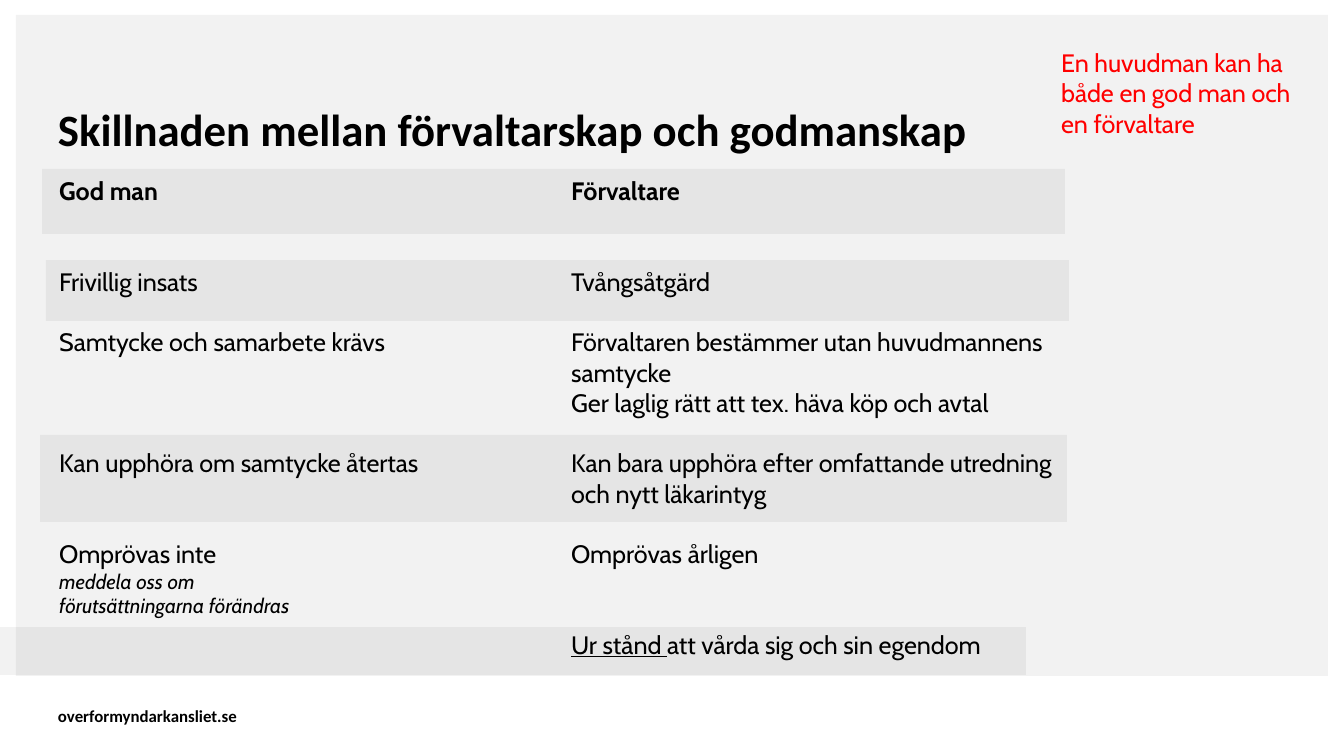
from dataclasses import dataclass

from lxml.etree import SubElement
from pptx import Presentation
from pptx.dml.color import RGBColor
from pptx.enum.shapes import MSO_SHAPE
from pptx.enum.text import MSO_ANCHOR
from pptx.oxml.ns import qn
from pptx.slide import Slide
from pptx.text.text import TextFrame
from pptx.util import Emu, Pt

EMU_PER_PX = 914400 / 134.4
LINE_POINTS = 16.2
COLORS = {"black": "000000", "red": "FF0000"}


@dataclass(frozen=True)
class Box:
    left: int
    top: int
    width: int
    height: int


@dataclass(frozen=True)
class Entry:
    text: str
    lines_before: int = 0
    size: float = 13.5
    font: str = "Cabin"
    color: str = "black"
    bold: bool = False
    italic: bool = False
    underlined_start: str = ""


PANEL = Box(16, 15, 1312, 661)
BANDS = [
    Box(42, 169, 1023, 65),
    Box(46, 260, 1023, 61),
    Box(40, 435, 1027, 87),
    Box(-8, 627, 1034, 48),
]
TITLE = Entry("Skillnaden mellan förvaltarskap och godmanskap",
              size=24, font="Calibri", bold=True)
FOOTER = Entry("overformyndarkansliet.se", size=9, font="Calibri", bold=True)
REMARK = Entry("En huvudman kan ha både en god man och en förvaltare", color="red")
COLUMNS = [
    (Box(46, 169, 464, 532), [
        Entry("God man", bold=True),
        Entry("Frivillig insats", 2),
        Entry("Samtycke och samarbete krävs", 1),
        Entry("Kan upphöra om samtycke återtas", 3),
        Entry("Omprövas inte", 2),
        Entry("meddela oss om \vförutsättningarna förändras", size=11, italic=True),
    ]),
    (Box(558, 169, 543, 532), [
        Entry("Förvaltare", bold=True),
        Entry("Tvångsåtgärd", 2),
        Entry("Förvaltaren bestämmer utan huvudmannens samtycke", 1),
        Entry("Ger laglig rätt att tex. häva köp och avtal"),
        Entry("Kan bara upphöra efter omfattande utredning och nytt läkarintyg", 1),
        Entry("Omprövas årligen", 1),
        Entry("att vårda sig och sin egendom", 2, underlined_start="Ur stånd "),
    ]),
]


def px(length: int) -> Emu:
    return Emu(round(length * EMU_PER_PX))


def place(box: Box) -> tuple[Emu, Emu, Emu, Emu]:
    return px(box.left), px(box.top), px(box.width), px(box.height)


def add_band(slide: Slide, box: Box) -> None:
    """Draw a black rectangle at 5 % opacity."""
    shape = slide.shapes.add_shape(MSO_SHAPE.RECTANGLE, *place(box))
    shape.shadow.inherit = False
    shape.line.fill.background()
    shape.fill.solid()
    shape.fill.fore_color.rgb = RGBColor.from_string(COLORS["black"])
    color = shape._element.spPr.find(qn("a:solidFill")).find(qn("a:srgbClr"))
    SubElement(color, qn("a:alpha")).set("val", "5000")


def add_text(slide: Slide, box: Box, entries: list[Entry], wrap: bool = True) -> TextFrame:
    text_frame = slide.shapes.add_textbox(*place(box)).text_frame
    text_frame.word_wrap = wrap
    for index, entry in enumerate(entries):
        paragraph = text_frame.add_paragraph() if index else text_frame.paragraphs[0]
        paragraph.text = entry.underlined_start or entry.text
        if entry.underlined_start:
            paragraph.runs[0].font.underline = True
            paragraph.add_run().text = entry.text
        if entry.lines_before:
            paragraph.space_before = Pt(entry.lines_before * LINE_POINTS)
        for run in paragraph.runs:
            run.font.name = entry.font
            run.font.size = Pt(entry.size)
            run.font.bold = entry.bold
            run.font.italic = entry.italic
            run.font.color.rgb = RGBColor.from_string(COLORS[entry.color])
    return text_frame


def set_margins(text_frame: TextFrame, left: int, top: int, right: int) -> None:
    text_frame.margin_left = px(left)
    text_frame.margin_top = px(top)
    text_frame.margin_right = px(right)
    text_frame.margin_bottom = 0


def main() -> None:
    presentation = Presentation()
    presentation.slide_width = px(1344)
    presentation.slide_height = px(756)
    slide = presentation.slides.add_slide(presentation.slide_layouts[6])

    add_band(slide, PANEL)
    footer = add_text(slide, Box(16, 706, 226, 20), [FOOTER], wrap=False)
    set_margins(footer, 42, 0, 0)
    footer.vertical_anchor = MSO_ANCHOR.MIDDLE
    title = add_text(slide, Box(16, 15, 1312, 141), [TITLE])
    set_margins(title, 42, 42, 42)
    title.vertical_anchor = MSO_ANCHOR.BOTTOM
    title.paragraphs[0].line_spacing = 0.9

    for box, entries in COLUMNS:
        add_text(slide, box, entries)
    for band in BANDS:
        add_band(slide, band)
    add_text(slide, Box(1048, 41, 272, 105), [REMARK])
    presentation.save("out.pptx")


if __name__ == "__main__":
    main()
